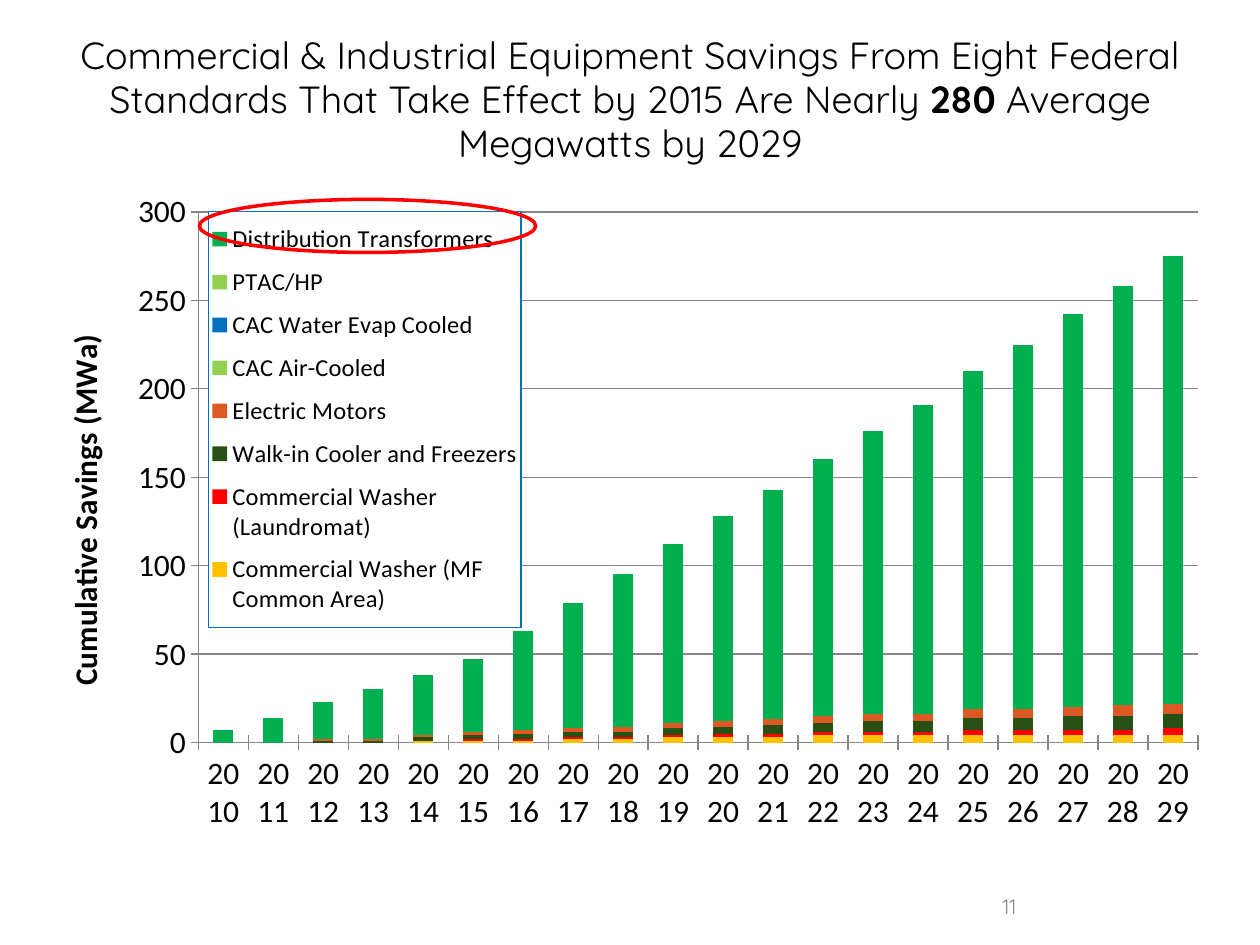
from lxml import etree
from pptx import Presentation, util as u
from pptx.chart.data import CategoryChartData
from pptx.dml.color import RGBColor
from pptx.enum import chart as ch, shapes, text
from pptx.oxml.ns import qn

HUES = {"ink": "000000", "grey": "8C8C8C", "grid": "868686", "red": "FF0000",
        "gold": "FFC000", "pine": "295014", "rust": "DC5924", "lime": "92D050",
        "blue": "0070C0", "green": "00B050"}
YEARS = [str(y) for y in range(2010, 2030)]
NONE = [0] * len(YEARS)
DATA = [
    ("Commercial Washer (MF Common Area)", "gold",
     [0, 0, 0, 0, 1, 1, 1, 2, 2, 3, 3, 3, 4, 4, 4, 4, 4, 4, 4, 4]),
    ("Commercial Washer (Laundromat)", "red",
     [0, 0, 0, 0, 0, 1, 1, 1, 1, 1, 2, 2, 2, 2, 2, 3, 3, 3, 3, 4]),
    ("Walk-in Cooler and Freezers", "pine",
     [0, 0, 1, 1, 2, 2, 3, 3, 3, 4, 4, 5, 5, 6, 6, 7, 7, 8, 8, 8]),
    ("Electric Motors", "rust",
     [0, 0, 1, 1, 1, 2, 2, 2, 3, 3, 3, 3, 4, 4, 4, 5, 5, 5, 6, 6]),
    ("CAC Air-Cooled", "lime", NONE),
    ("CAC Water Evap Cooled", "blue", NONE),
    ("PTAC/HP", "lime", NONE),
    ("Distribution Transformers", "green",
     [7, 14, 21, 28, 34, 41, 56, 71, 86, 101, 116, 130, 145, 160, 175, 191,
      206, 222, 237, 253]),
]


def hue(name):
    return RGBColor.from_string(HUES[name])


def write(para, words, size=18, font="Quicksand", color="ink", bold=False):
    run = para.add_run()
    run.text = words
    run.font.size, run.font.name, run.font.bold = u.Pt(size), font, bold
    run.font.color.rgb = hue(color)


def place(parent, after, spot, inner=False):
    """Give a chart part a manual layout, in fractions of the chart."""
    for old in parent.findall(qn("c:layout")):
        parent.remove(old)
    lay = etree.Element(qn("c:layout"))
    man = etree.SubElement(lay, qn("c:manualLayout"))
    marks = [("layoutTarget", "inner")] if inner else []
    marks += [("xMode", "edge"), ("yMode", "edge"), *zip("xywh", spot)]
    for tag, val in marks:
        etree.SubElement(man, qn("c:" + tag)).set("val", str(val))
    if after is None:
        parent.insert(0, lay)
    else:
        after.addnext(lay)


class Page:
    def __init__(self, deck):
        self.slide = deck.slides.add_slide(deck.slide_layouts[6])

    def label(self, box, parts, align, **style):
        frame = self.slide.shapes.add_textbox(*map(u.Cm, box)).text_frame
        frame.word_wrap = True
        frame.vertical_anchor = text.MSO_ANCHOR.MIDDLE
        para = frame.paragraphs[0]
        para.alignment, para.line_spacing = align, 0.97
        for words, bold in parts:
            write(para, words, bold=bold, **style)

    def ring(self, box, color, width):
        oval = self.slide.shapes.add_shape(shapes.MSO_SHAPE.OVAL, *map(u.Cm, box))
        oval.shadow.inherit = False
        oval.fill.background()
        oval.line.color.rgb, oval.line.width = hue(color), u.Pt(width)

    def bars(self, box, rows, cats, title):
        data = CategoryChartData(number_format="0")
        data.categories = cats
        for name, _, vals in rows:
            data.add_series(name, vals)
        chart = self.slide.shapes.add_chart(
            ch.XL_CHART_TYPE.COLUMN_STACKED, *map(u.Cm, box), data).chart
        chart.has_title = False
        chart.font.size, chart.font.name = u.Pt(18), "Calibri"
        chart.font.color.rgb = hue("ink")

        # Series
        plot = chart.plots[0]
        plot.gap_width, plot.overlap, plot.vary_by_categories = 150, 100, False
        for ser, (_, color, _) in zip(plot.series, rows):
            ser.format.fill.solid()
            ser.format.fill.fore_color.rgb = hue(color)

        # Axes
        val, cat = chart.value_axis, chart.category_axis
        val.minimum_scale, val.maximum_scale, val.major_unit = 0, 300, 50
        val.tick_labels.number_format = "0"
        val.tick_labels.number_format_is_linked = False
        for axis in (val, cat):
            axis.major_tick_mark = ch.XL_TICK_MARK.CROSS
            axis.format.line.color.rgb = hue("grid")
            axis.tick_labels.font.size = u.Pt(18)
        body = cat.tick_labels.font._element.getparent().getparent().getparent()
        body.find(qn("a:bodyPr")).set("rot", "0")
        val.has_major_gridlines = True
        val.major_gridlines.format.line.color.rgb = hue("grid")
        write(val.axis_title.text_frame.paragraphs[0], title,
              font="Calibri", bold=True)

        # Legend over the plot
        chart.has_legend = True
        key = chart.legend
        key.position, key.include_in_layout = ch.XL_LEGEND_POSITION.RIGHT, False
        key.font.size = u.Pt(14)
        root = key._element
        place(root, root.find(qn("c:legendPos")), (0.14, 0.027, 0.267, 0.659))
        look = etree.Element(qn("c:spPr"))
        for host, kind in ((look, "white"), (etree.Element(qn("a:ln"), w="9525"), "blue")):
            fill = etree.SubElement(host, qn("a:solidFill"))
            etree.SubElement(fill, qn("a:srgbClr")).set("val", HUES.get(kind, "FFFFFF"))
            if host is not look:
                look.append(host)
        root.find(qn("c:txPr")).addprevious(look)
        area = chart._chartSpace.find(".//" + qn("c:plotArea"))
        place(area, None, (0.131, 0.028, 0.855, 0.84), inner=True)


def main():
    deck = Presentation()
    deck.slide_width, deck.slide_height = u.Cm(25.4), u.Cm(19.05)
    page = Page(deck)
    # Title
    page.label((0.43, 0.43, 24.55, 3.18), [
        ("Commercial & Industrial Equipment Savings From Eight Federal "
         "Standards That Take Effect by 2015 Are Nearly ", False),
        ("280", True), (" Average Megawatts by 2029", False)],
        text.PP_ALIGN.CENTER, size=21.6)
    # Savings chart with its top entry ringed
    page.bars((0.91, 3.89, 23.57, 12.85), DATA, YEARS, "Cumulative Savings (MWa)")
    page.ring((4.02, 4.02, 6.78, 1.07), "red", 2)
    # Page number
    page.label((14.82, 17.78, 5.92, 1.02), [("11", False)],
               text.PP_ALIGN.RIGHT, size=12, color="grey")
    deck.save("out.pptx")


if __name__ == "__main__":
    main()
